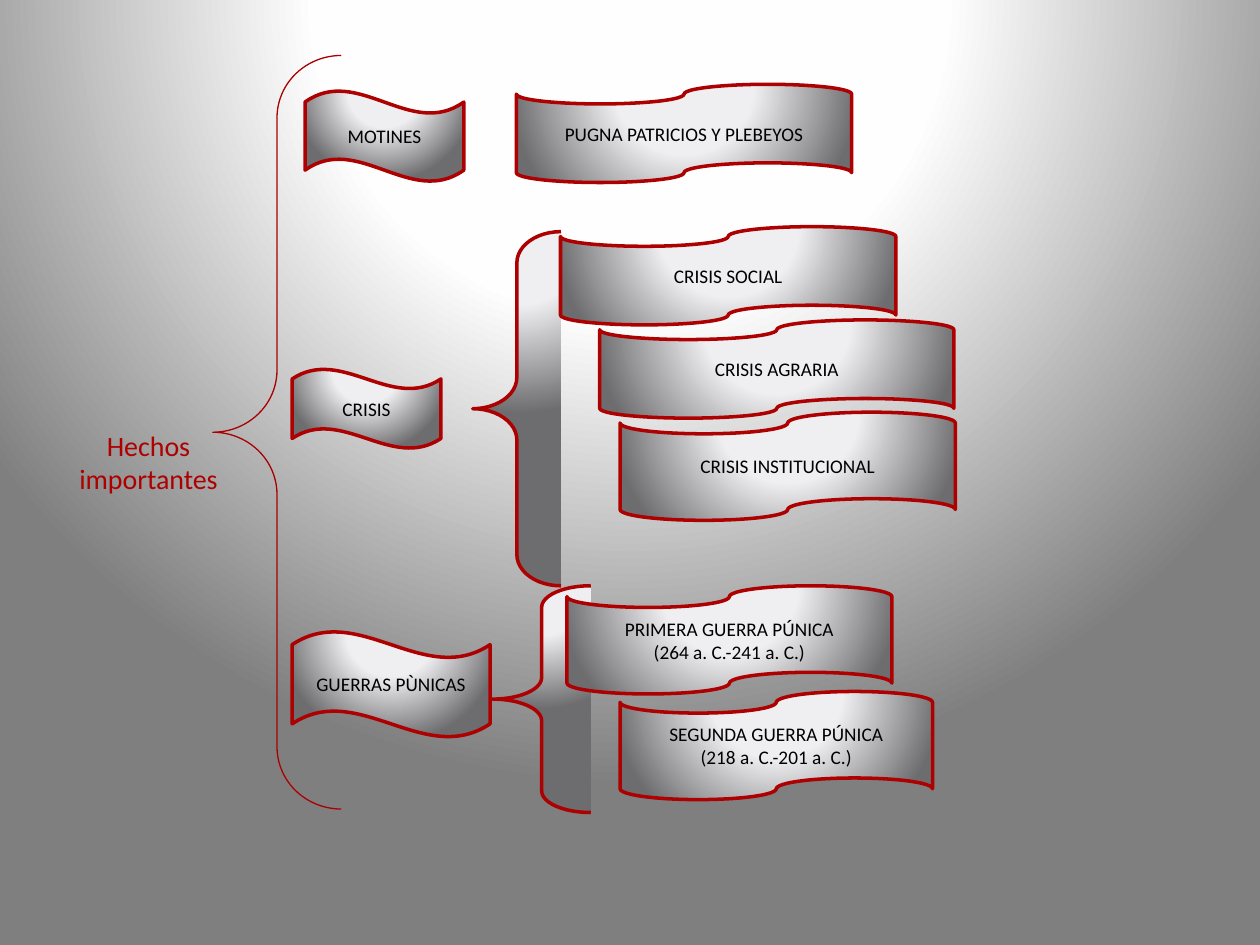
"""Build the slide of key events: riots, crises and Punic Wars."""
from lxml.etree import SubElement
from pptx import Presentation
from pptx.dml.color import RGBColor
from pptx.enum.shapes import MSO_SHAPE
from pptx.enum.text import MSO_ANCHOR, MSO_AUTO_SIZE, PP_ALIGN
from pptx.oxml.ns import qn
from pptx.util import Cm, Pt

HUES = {"red": "AD0101", "edge": "AA0000", "ink": "000000"}
PAGE = {0: "FFFFFF", 40: "FEFEFE", 100: "7F7F7F"}
STEEL = {0: "F2F2F4", 40: "EFEFF2", 100: "6D6D70"}


def shade(props, stops):
    """Swap the solid fill of props for a round gradient."""
    solid = props.find(qn("a:solidFill"))
    grad = SubElement(props, qn("a:gradFill"), rotWithShape="1")
    props.replace(solid, grad)
    steps = SubElement(grad, qn("a:gsLst"))
    for pos, hue in stops.items():
        stop = SubElement(steps, qn("a:gs"), pos=str(pos * 1000))
        SubElement(stop, qn("a:srgbClr"), val=hue)
    way = SubElement(grad, qn("a:path"), path="circle")
    SubElement(way, qn("a:fillToRect"), l="50000", t="-80000", r="50000", b="180000")


def write(frame, lines, size, hue):
    """Write centred lines in one paragraph."""
    frame.word_wrap = True
    para = frame.paragraphs[0]
    para.alignment = PP_ALIGN.CENTER
    for num, line in enumerate(lines):
        if num:
            para.add_line_break()
        run = para.add_run()
        run.text = line
        run.font.name = "Calibri"
        run.font.size = Pt(size)
        run.font.color.rgb = RGBColor.from_string(HUES[hue])


deck = Presentation()
deck.slide_width, deck.slide_height = Cm(25.4), Cm(19.05)
slide = deck.slides.add_slide(deck.slide_layouts[6])
slide.background.fill.solid()
shade(slide.element.find(".//" + qn("p:bgPr")), PAGE)

BRACE, WAVE, TAPE = MSO_SHAPE.LEFT_BRACE, MSO_SHAPE.WAVE, MSO_SHAPE.FLOWCHART_PUNCHED_TAPE
items = [
    (BRACE, (4.29, 1.12, 2.59, 15.19), 0.484),
    (WAVE, (6.15, 1.83, 3.2, 1.83), ["MOTINES"]),
    (WAVE, (5.89, 7.44, 3, 1.6), ["CRISIS"]),
    (WAVE, (5.89, 12.73, 3.99, 2.13), ["GUERRAS PÙNICAS"]),
    (BRACE, (9.53, 4.67, 1.78, 7.14), 0.354),
    (TAPE, (11.3, 4.57, 6.76, 1.98), ["CRISIS SOCIAL"]),
    (TAPE, (12.5, 8.31, 6.76, 2.18), ["CRISIS INSTITUCIONAL"]),
    (TAPE, (12.09, 6.45, 7.14, 1.98), ["CRISIS AGRARIA"]),
    (BRACE, (9.93, 11.81, 1.98, 4.57), 0.219),
    (TAPE, (11.43, 11.81, 6.55, 2.18), ["PRIMERA GUERRA PÚNICA", "(264 a. C.-241 a. C.)"]),
    (TAPE, (12.5, 13.94, 6.3, 2.18), ["SEGUNDA GUERRA PÚNICA", "(218 a. C.-201 a. C.)"]),
    (TAPE, (10.41, 1.7, 6.76, 1.98), ["PUGNA PATRICIOS Y PLEBEYOS"]),
]
for num, (kind, box, part) in enumerate(items):
    main = num == 0
    shape = slide.shapes.add_shape(kind, *map(Cm, box))
    shape.shadow.inherit = False
    shape.line.color.rgb = RGBColor.from_string(HUES["edge" if main else "red"])
    shape.line.width = Pt(0.75 if main else 2)
    if main:
        shape.fill.background()
    else:
        shape.fill.solid()
        shade(shape.element.spPr, STEEL)
    if kind == BRACE:
        shape.adjustments[0] = part
    else:
        shape.text_frame.vertical_anchor = MSO_ANCHOR.MIDDLE
        write(shape.text_frame, part, 11, "ink")

title = slide.shapes.add_textbox(Cm(1.09), Cm(8.51), Cm(3.81), Cm(1.63))
title.text_frame.auto_size = MSO_AUTO_SIZE.SHAPE_TO_FIT_TEXT
write(title.text_frame, ["Hechos importantes"], 16, "red")

deck.save("out.pptx")
